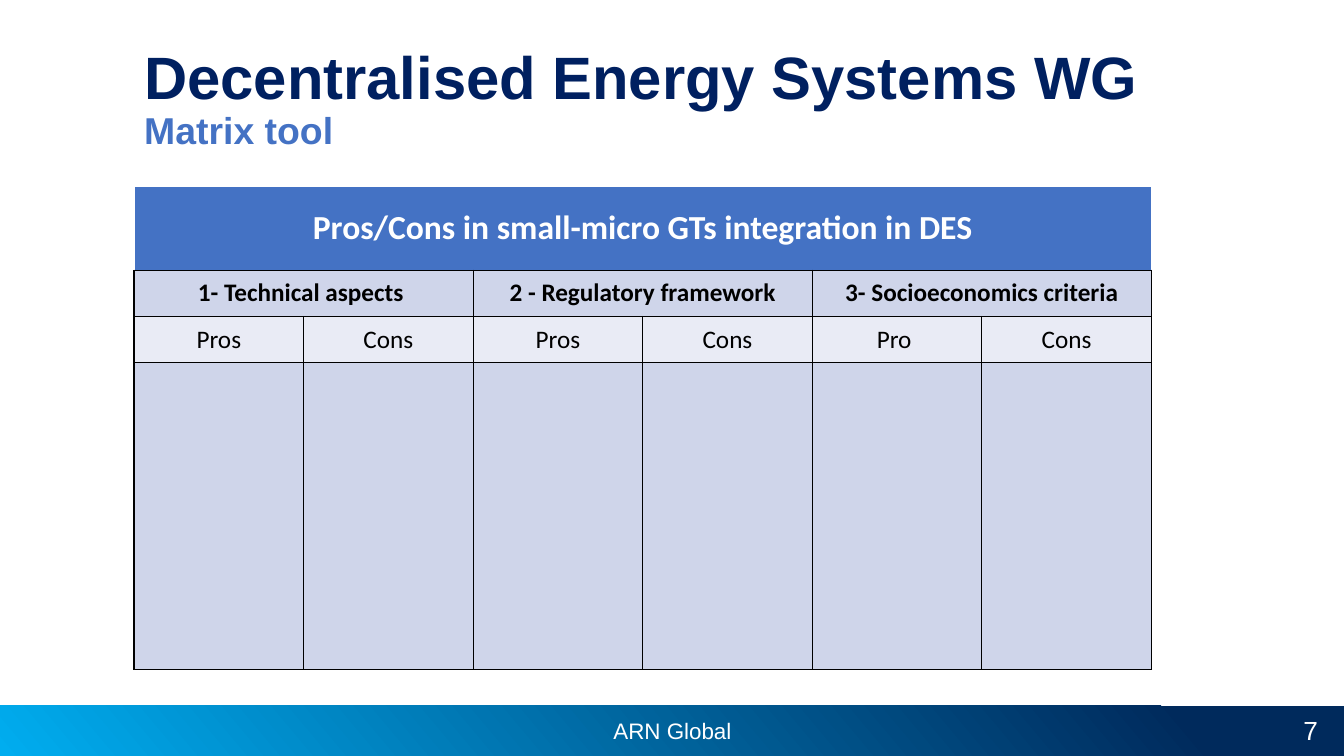
from lxml.etree import SubElement
from pptx import Presentation
from pptx.dml.color import RGBColor
from pptx.enum.shapes import MSO_SHAPE as Shape
from pptx.enum.text import MSO_ANCHOR as Anchor, MSO_AUTO_SIZE as AutoSize, PP_ALIGN as Align
from pptx.oxml.ns import qn
from pptx.util import Inches, Pt

NAVY, BLUE, WHITE, BLACK = "002060", "4472C4", "FFFFFF", "000000"
BAND, PALE = "CFD5EA", "E9EBF5"


def colour(value):
    return RGBColor.from_string(value)


class SlideBuilder:
    heading_font = "Arial"
    table_font = "Calibri"

    def __init__(self, deck):
        self.page = deck.slides.add_slide(deck.slide_layouts[5])

    def span(self, para, text, size, ink, font, bold=False):
        span = para.add_run()
        span.text = text
        span.font.size = Pt(size)
        span.font.name = font
        span.font.bold = bold
        span.font.color.rgb = colour(ink)

    def title(self, place, heading, subtitle):
        box = self.page.shapes.title
        box.left, box.top, box.width, box.height = map(Inches, place)
        frame = box.text_frame
        frame.word_wrap = True
        frame.auto_size = AutoSize.NONE
        frame.vertical_anchor = Anchor.MIDDLE
        para = frame.paragraphs[0]
        para.alignment = Align.LEFT
        para.line_spacing = 0.9
        self.span(para, heading, 42.7, NAVY, self.heading_font, True)
        para.add_line_break()
        self.span(para, subtitle, 26.7, BLUE, self.heading_font, True)

    def gradient_bar(self, place, stops, angle):
        bar = self.page.shapes.add_shape(Shape.RECTANGLE, *map(Inches, place))
        bar.shadow.inherit = False
        bar.line.fill.background()
        bar.fill.gradient()
        bar.fill.gradient_angle = angle
        for stop, (position, value) in zip(bar.fill.gradient_stops, stops):
            stop.position = position
            stop.color.rgb = colour(value)

    def label(self, place, text, size, align):
        box = self.page.shapes.add_textbox(*map(Inches, place))
        frame = box.text_frame
        frame.word_wrap = True
        frame.vertical_anchor = Anchor.MIDDLE
        para = frame.paragraphs[0]
        para.alignment = align
        self.span(para, text, size, WHITE, self.heading_font)

    def borders(self, cell, edges):
        properties = cell._tc.get_or_add_tcPr()
        for side, value in zip("LRTB", edges):
            line = SubElement(properties, qn(f"a:ln{side}"), w=str(Pt(1)))
            fill = SubElement(line, qn("a:solidFill"))
            SubElement(fill, qn("a:srgbClr"), val=value)

    def table(self, place, heights, rows):
        columns = max(len(row["texts"]) for row in rows)
        frame = self.page.shapes.add_table(len(rows), columns, *map(Inches, place))
        table = frame.table
        for column in table.columns:
            column.width = Inches(place[2] / columns)
        for index, (height, row) in enumerate(zip(heights, rows)):
            table.rows[index].height = Inches(height)
            step = columns // len(row["texts"])
            for position in range(columns):
                cell = table.cell(index, position)
                self.borders(cell, row["edges"])
                cell.fill.solid()
                cell.fill.fore_color.rgb = colour(row["fill"])
            for number, text in enumerate(row["texts"]):
                cell = table.cell(index, number * step)
                if step > 1:
                    cell.merge(table.cell(index, number * step + step - 1))
                cell.vertical_anchor = Anchor.MIDDLE
                para = cell.text_frame.paragraphs[0]
                para.alignment = Align.CENTER
                if text:
                    self.span(para, text, row["size"], row["ink"], self.table_font, row["bold"])


def table_row(texts, fill, size=18, ink=BLACK, bold=False, edges=(BLACK,) * 4):
    return dict(texts=texts, fill=fill, size=size, ink=ink, bold=bold, edges=edges)


def main():
    deck = Presentation()
    deck.slide_width, deck.slide_height = Inches(13.33), Inches(7.5)
    slide = SlideBuilder(deck)
    slide.gradient_bar((0, 7, 13.33, 0.5), [(0.12, "002A5C"), (1, "00ADEF")], 220)
    slide.label((3.36, 7, 6.62, 0.49), "ARN Global", 16, Align.CENTER)
    slide.label((10.06, 7.04, 3.11, 0.4), "7", 18.7, Align.RIGHT)
    slide.title((1.33, 0.33, 12, 1.33), "Decentralised Energy Systems WG", "Matrix tool")
    aspects = ["1- Technical aspects ", "2 - Regulatory framework", "3- Socioeconomics criteria"]
    sides = ["Pros", "Cons", "Pros", "Cons", "Pro ", "Cons"]
    slide.table((1.33, 1.85, 10.09, 4.79), (0.83, 0.46, 0.46, 3.04), [
        table_row(["Pros/Cons in small-micro GTs integration in DES"], BLUE, 24, WHITE, True,
                  (WHITE, WHITE, WHITE, BLACK)),
        table_row(aspects, BAND, bold=True),
        table_row(sides, PALE),
        table_row([""] * len(sides), BAND),
    ])
    deck.save("out.pptx")


if __name__ == "__main__":
    main()
